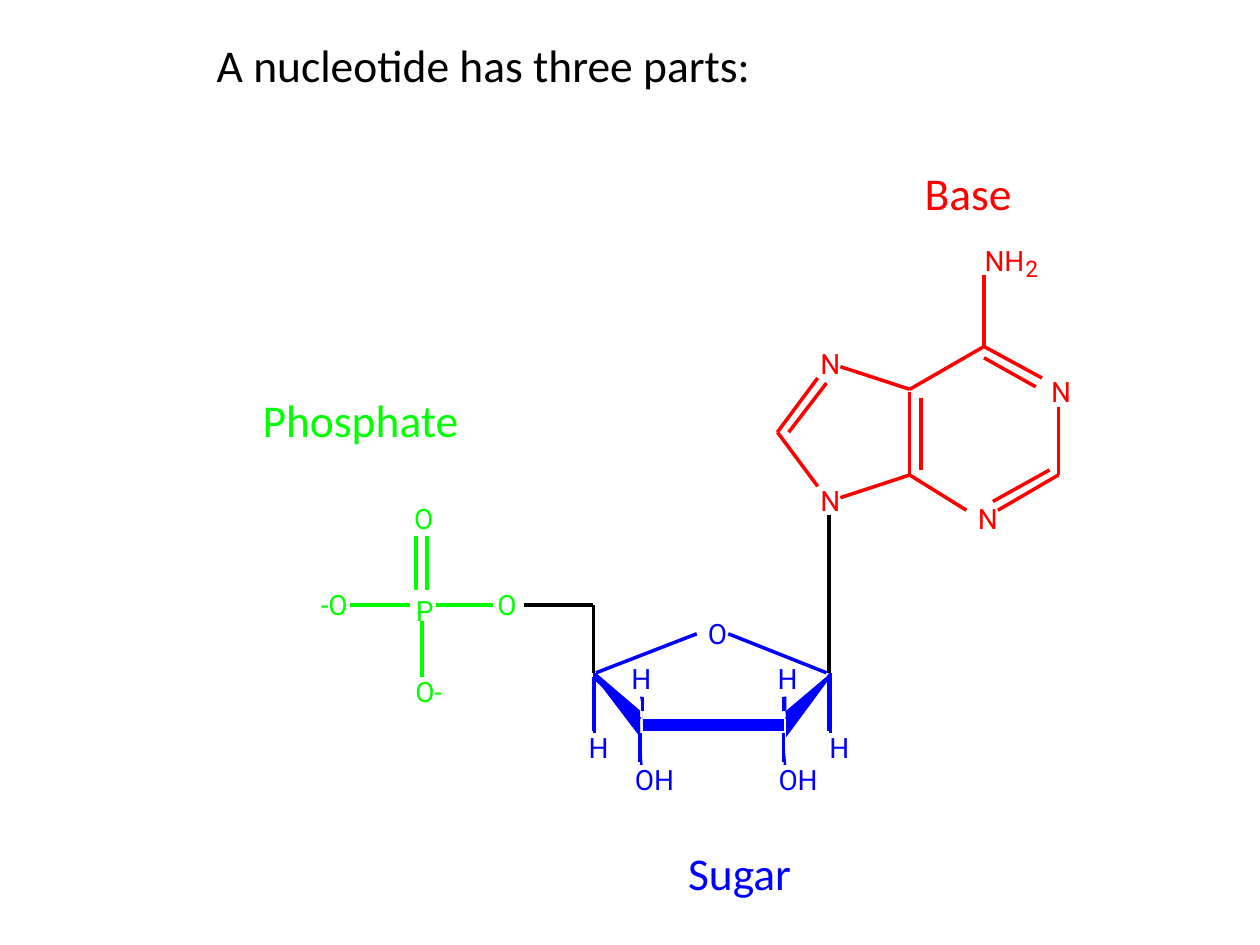
"""Build a slide showing the three parts of a nucleotide."""
from dataclasses import dataclass
from typing import NamedTuple

import pptx
import pptx.dml.color
import pptx.enum.shapes
import pptx.enum.text
import pptx.oxml
import pptx.oxml.ns
import pptx.util

CM_PER_UNIT = 2.54


@dataclass(frozen=True)
class Theme:
    base: str = "FF0000"
    sugar: str = "0000FF"
    phosphate: str = "00FF00"
    ink: str = "000000"
    atom_font: str = "Roboto"
    label_font: str = "Calibri"
    atom_size: int = 16
    subscript_size: int = 13
    label_size: int = 26


THEME = Theme()


class Bond(NamedTuple):
    x1: float
    y1: float
    x2: float
    y2: float


class Label(NamedTuple):
    text: str
    left: float
    top: float
    width: float
    color: str
    size: int = THEME.atom_size
    font: str = THEME.atom_font
    height: float = 0.36


def heading(text: str, left: float, top: float, width: float, color: str) -> Label:
    return Label(text, left, top, width, color, THEME.label_size, THEME.label_font, 0.44)


BONDS = {
    THEME.base: [
        Bond(8.4, 3.23, 8.4, 3.77), Bond(8.4, 3.77, 7.92, 4.05),
        Bond(7.88, 3.98, 8.33, 3.73), Bond(7.22, 3.77, 7.67, 4.05),
        Bond(7.22, 3.11, 7.22, 3.77), Bond(7.31, 3.16, 7.31, 3.73),
        Bond(7.22, 3.09, 7.81, 2.75), Bond(8.27, 3, 7.81, 2.75),
        Bond(7.81, 2.84, 8.22, 3.07), Bond(6.67, 3.95, 7.22, 3.77),
        Bond(6.49, 3.86, 6.17, 3.43), Bond(6.49, 3, 6.17, 3.43),
        Bond(6.56, 3.04, 6.26, 3.43), Bond(7.22, 3.09, 6.67, 2.91),
        Bond(7.81, 2.18, 7.81, 2.75),
    ],
    THEME.sugar: [
        Bond(6.19, 5.76, 5.1, 5.76), Bond(6.56, 5.39, 6.24, 5.71),
        Bond(5.78, 5.03, 6.56, 5.34), Bond(5.53, 5.03, 4.73, 5.34),
        Bond(5.08, 5.71, 4.73, 5.39), Bond(6.22, 6.05, 6.22, 5.82),
        Bond(5.08, 5.82, 5.08, 6.05), Bond(6.22, 5.64, 6.22, 5.53),
        Bond(5.1, 5.53, 5.1, 5.64), Bond(6.58, 5.37, 6.58, 5.8),
        Bond(4.71, 5.8, 4.71, 5.37),
    ],
    THEME.ink: [
        Bond(4.71, 4.8, 4.71, 5.34), Bond(6.58, 4.09, 6.58, 5.34),
        Bond(4.16, 4.8, 4.71, 4.8),
    ],
    THEME.phosphate: [
        Bond(3.46, 4.8, 3.91, 4.8), Bond(2.78, 4.8, 3.25, 4.8),
        Bond(3.35, 5.37, 3.35, 4.93), Bond(3.3, 4.25, 3.3, 4.68),
        Bond(3.39, 4.25, 3.39, 4.68),
    ],
}

WEDGES = [
    [(6.22, 5.71), (6.22, 5.8), (5.1, 5.8), (5.1, 5.71)],
    [(6.56, 5.37), (6.58, 5.34), (6.58, 5.39), (6.24, 5.85), (6.24, 5.64)],
    [(4.73, 5.39), (4.73, 5.34), (5.08, 5.64), (5.08, 5.85)],
    [(6.24, 6.07), (6.22, 6.07), (6.22, 5.76), (6.22, 5.85)],
    [(5.1, 6.07), (5.08, 6.07), (5.08, 5.76), (5.08, 5.8)],
    [(6.22, 5.53), (6.24, 5.53), (6.24, 5.76), (6.24, 5.71)],
    [(5.08, 5.53), (5.1, 5.53), (5.1, 5.76), (5.1, 5.64)],
    [(6.6, 5.82), (6.58, 5.82), (6.58, 5.34), (6.6, 5.34)],
    [(4.73, 5.82), (4.71, 5.82), (4.71, 5.34), (4.73, 5.34)],
]

TITLE = heading("A nucleotide has three parts:", 1.33, 0.29, 4.63, THEME.ink)

LABELS = [
    *(Label("N", x, y, 0.25, THEME.base)
      for x, y in [(8.25, 2.97), (7.67, 3.98), (6.42, 3.84), (6.42, 2.75)]),
    Label("NH", 7.72, 1.93, 0.41, THEME.base),
    Label("2", 8.04, 2.02, 0.2, THEME.base, THEME.subscript_size, height=0.34),
    Label("O", 5.5, 4.89, 0.27, THEME.sugar),
    *(Label("OH", x, 6.05, 0.43, THEME.sugar) for x in (6.06, 4.92)),
    *(Label("H", x, y, 0.25, THEME.sugar)
      for x, y in [(6.08, 5.25), (4.92, 5.25), (6.49, 5.8), (4.58, 5.8)]),
    Label("O", 3.83, 4.66, 0.27, THEME.phosphate),
    Label("P", 3.19, 4.71, 0.25, THEME.phosphate),
    Label("-O", 2.42, 4.66, 0.34, THEME.phosphate),
    Label("O-", 3.17, 5.35, 0.34, THEME.phosphate),
    Label("O", 3.17, 3.98, 0.27, THEME.phosphate),
    heading("Base", 7.2, 1.31, 0.83, THEME.base),
    heading("Sugar", 5.31, 6.71, 0.97, THEME.sugar),
    heading("Phosphate", 1.89, 3.11, 1.75, THEME.phosphate),
]


def length(units: float) -> pptx.util.Length:
    return pptx.util.Cm(units * CM_PER_UNIT)


def rgb(color: str) -> pptx.dml.color.RGBColor:
    return pptx.dml.color.RGBColor.from_string(color)


def draw_bond(s, bond: Bond, color: str) -> None:
    line = s.shapes.add_connector(
        pptx.enum.shapes.MSO_CONNECTOR.STRAIGHT, *map(length, bond))
    line.line.color.rgb = rgb(color)
    line.line.width = pptx.util.Pt(0)
    props = line._element.spPr
    props.append(props.makeelement(pptx.oxml.ns.qn("a:effectLst"), {}))


def draw_wedge(s, points: list[tuple[float, float]], color: str) -> None:
    start, *rest = [(length(x), length(y)) for x, y in points]
    builder = s.shapes.build_freeform(*start)
    builder.add_line_segments(rest)
    wedge = builder.convert_to_shape()
    wedge.fill.solid()
    wedge.fill.fore_color.rgb = rgb(color)
    wedge.line.fill.background()
    wedge.shadow.inherit = False


def write_label(sp, label: Label) -> None:
    sp.left, sp.top = length(label.left), length(label.top)
    sp.width, sp.height = length(label.width), length(label.height)
    tf = sp.text_frame
    tf.margin_left = tf.margin_top = tf.margin_right = tf.margin_bottom = 0
    tf.word_wrap = False
    tf.auto_size = pptx.enum.text.MSO_AUTO_SIZE.SHAPE_TO_FIT_TEXT
    tf.vertical_anchor = pptx.enum.text.MSO_ANCHOR.TOP
    tf.text = label.text
    p = tf.paragraphs[0]
    p.alignment = pptx.enum.text.PP_ALIGN.RIGHT
    p.font.name = label.font
    p.font.size = pptx.util.Pt(label.size)
    p.font.color.rgb = rgb(label.color)


def main() -> None:
    prs = pptx.Presentation()
    prs.slide_width, prs.slide_height = length(10), length(7.5)
    s = prs.slides.add_slide(prs.slide_layouts[5])
    write_label(s.shapes.title, TITLE)
    for color, bonds in BONDS.items():
        for bond in bonds:
            draw_bond(s, bond, color)
    for points in WEDGES:
        draw_wedge(s, points, THEME.sugar)
    for label in LABELS:
        write_label(s.shapes.add_textbox(0, 0, 0, 0), label)
    prs.save("out.pptx")


if __name__ == "__main__":
    main()
